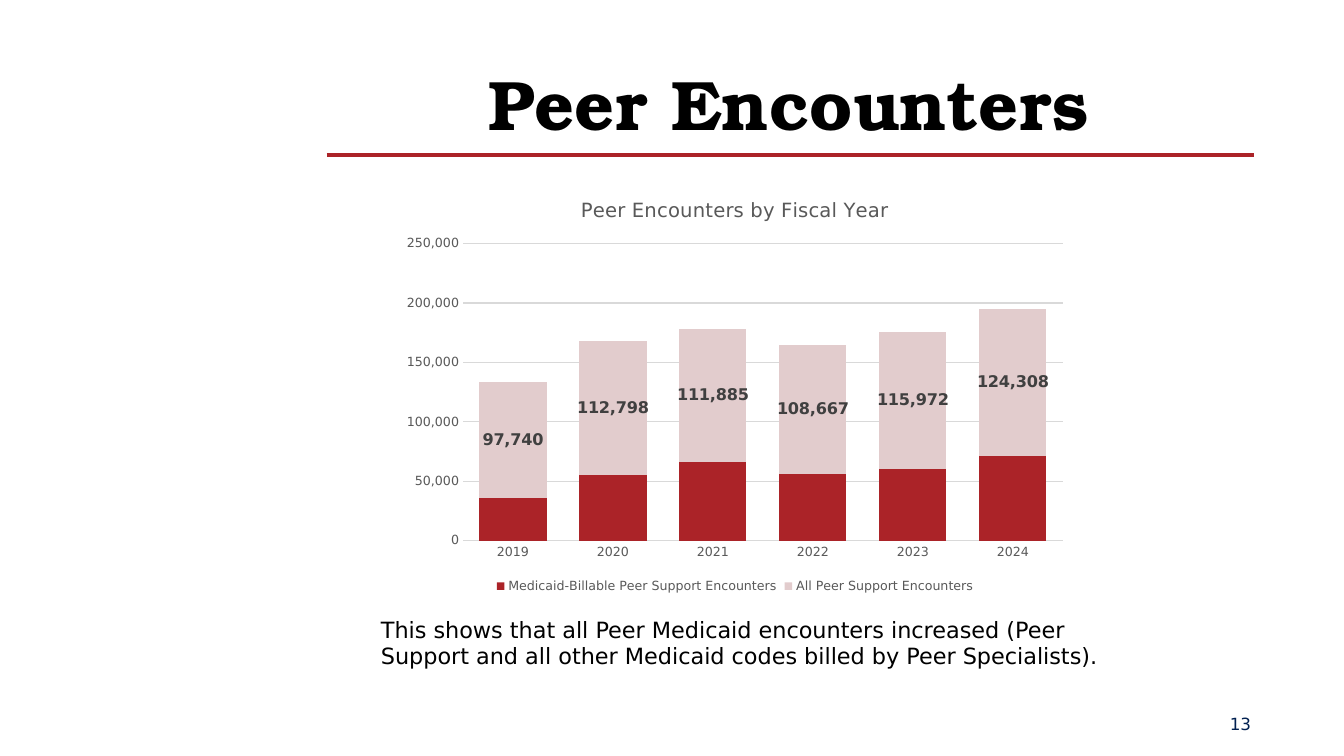
import pptx
import pptx.chart.data
import pptx.dml.color
import pptx.enum.chart
import pptx.enum.shapes
import pptx.enum.text
import pptx.util
from pptx.util import Cm

SANS = "DejaVu Sans"
RED = "AB2328"
GREY = "595959"
YEARS = ["2019", "2020", "2021", "2022", "2023", "2024"]
BILLED = [36000, 55000, 66000, 56000, 60000, 71000]
TOTAL = [97740, 112798, 111885, 108667, 115972, 124308]


def color(text):
    return pptx.dml.color.RGBColor.from_string(text)


def style(font, size, shade, face=SANS, bold=False):
    font.size = pptx.util.Pt(size)
    font.name = face
    font.bold = bold
    font.color.rgb = color(shade)


def add_title(slide, text):
    title = slide.shapes.title
    title.left, title.top = Cm(8.23), Cm(1.7)
    title.width, title.height = Cm(23.3), Cm(2.06)
    frame = title.text_frame
    frame.text = text
    frame.auto_size = pptx.enum.text.MSO_AUTO_SIZE.NONE
    frame.vertical_anchor = pptx.enum.text.MSO_ANCHOR.BOTTOM
    para = frame.paragraphs[0]
    para.alignment = pptx.enum.text.PP_ALIGN.CENTER
    style(para.font, 50, "000000", "TeX Gyre Bonum", True)


def add_rule(slide):
    rule = slide.shapes.add_connector(
        pptx.enum.shapes.MSO_CONNECTOR.STRAIGHT,
        Cm(8.23), Cm(3.91), Cm(31.6), Cm(3.91))
    rule.line.color.rgb = color(RED)
    rule.line.width = pptx.util.Pt(3)
    props = rule.element.spPr
    props.append(pptx.oxml.parse_xml(
        '<a:effectLst xmlns:a="http://schemas.openxmlformats.org/drawingml/2006/main"/>'))


def add_text(slide, text, box, size, shade, align, anchor):
    frame = slide.shapes.add_textbox(*map(Cm, box)).text_frame
    frame.word_wrap = True
    frame.vertical_anchor = anchor
    frame.text = text
    para = frame.paragraphs[0]
    para.alignment = align
    style(para.font, size, shade)


def style_axis(axis):
    axis.major_tick_mark = pptx.enum.chart.XL_TICK_MARK.NONE
    axis.minor_tick_mark = pptx.enum.chart.XL_TICK_MARK.NONE
    axis.format.line.fill.background()
    style(axis.tick_labels.font, 9, GREY)


def add_chart(slide):
    data = pptx.chart.data.CategoryChartData(number_format="#,##0")
    data.categories = YEARS
    data.add_series("Medicaid-Billable Peer Support Encounters", BILLED)
    data.add_series("All Peer Support Encounters", TOTAL)
    chart = slide.shapes.add_chart(
        pptx.enum.chart.XL_CHART_TYPE.COLUMN_STACKED,
        Cm(9.91), Cm(4.52), Cm(17.22), Cm(10.54), data).chart
    style(chart.font, 10, "000000")

    chart.has_title = True
    frame = chart.chart_title.text_frame
    frame.text = "Peer Encounters by Fiscal Year"
    style(frame.paragraphs[0].font, 14, GREY)
    chart.chart_title.include_in_layout = False

    chart.has_legend = True
    chart.legend.position = pptx.enum.chart.XL_LEGEND_POSITION.BOTTOM
    chart.legend.include_in_layout = False
    style(chart.legend.font, 9, GREY)

    style_axis(chart.category_axis)
    scale = chart.value_axis
    style_axis(scale)
    scale.minimum_scale, scale.maximum_scale = 0, 250000
    scale.major_unit = 50000
    scale.tick_labels.number_format = "#,##0"
    scale.tick_labels.number_format_is_linked = False
    grid = scale.major_gridlines.format.line
    grid.color.rgb = color("D9D9D9")
    grid.width = pptx.util.Pt(0.75)

    plot = chart.plots[0]
    plot.vary_by_categories = False
    plot.gap_width, plot.overlap = 49, 100
    for series, shade in zip(plot.series, (RED, "E2CCCD")):
        series.format.fill.solid()
        series.format.fill.fore_color.rgb = color(shade)
    labels = plot.series[1].data_labels
    labels.show_value = True
    labels.position = pptx.enum.chart.XL_LABEL_POSITION.CENTER
    style(labels.font, 11.5, "404040", bold=True)


def main():
    deck = pptx.Presentation()
    deck.slide_width, deck.slide_height = Cm(33.87), Cm(19.05)
    slide = deck.slides.add_slide(deck.slide_layouts[5])
    align = pptx.enum.text.PP_ALIGN
    anchor = pptx.enum.text.MSO_ANCHOR
    add_rule(slide)
    add_title(slide, "Peer Encounters")
    add_text(slide,
             "This shows that all Peer Medicaid encounters increased "
             "(Peer Support and all other Medicaid codes billed by Peer Specialists).",
             (9.35, 15.39, 19.94, 2.39), 16, "000000", align.LEFT, anchor.TOP)
    add_text(slide, "13", (25.83, 17.8, 5.95, 0.9), 12, "022151",
             align.RIGHT, anchor.MIDDLE)
    add_chart(slide)
    deck.save("out.pptx")


if __name__ == "__main__":
    main()
